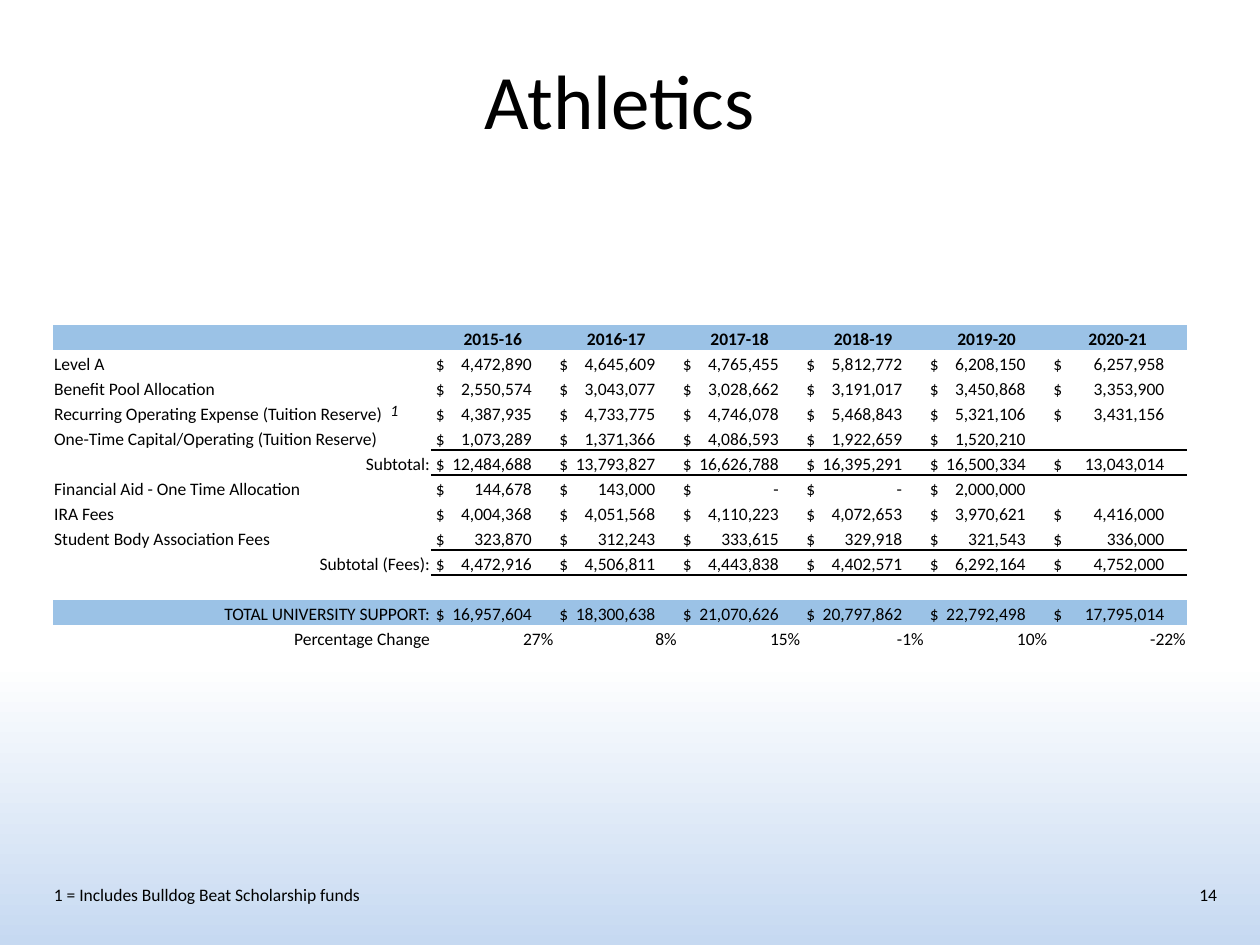
from dataclasses import dataclass

from lxml.etree import SubElement
from pptx import Presentation
from pptx.dml.color import RGBColor
from pptx.enum.text import MSO_ANCHOR, PP_ALIGN
from pptx.oxml.ns import qn
from pptx.util import Inches, Pt


@dataclass(frozen=True)
class Theme:
    font: str = "Calibri"
    ink: str = "000000"
    band: str = "9BC2E6"
    paper: str = "FFFFFF"
    sky: str = "C6D9F1"
    title_size: float = 44
    body_size: float = 10
    mark_size: float = 9
    rule_width: float = 1


THEME = Theme()
NO_STYLE_NO_GRID = "{2D5ABB26-0587-4C30-8999-92F81FD0307C}"

TITLE = "Athletics"
FOOTNOTE = "1 = Includes Bulldog Beat Scholarship funds"
FOOTNOTE_MARK = "1"
PAGE_NUMBER = "14"

YEARS = ["2015-16", "2016-17", "2017-18", "2018-19", "2019-20", "2020-21"]
# Row kind, label, one value per year (None leaves the cell empty)
ROWS = [
    ("header", "", YEARS),
    ("item", "Level A", [4472890, 4645609, 4765455, 5812772, 6208150, 6257958]),
    ("item", "Benefit Pool Allocation",
     [2550574, 3043077, 3028662, 3191017, 3450868, 3353900]),
    ("item", "Recurring Operating Expense (Tuition Reserve)",
     [4387935, 4733775, 4746078, 5468843, 5321106, 3431156]),
    ("item", "One-Time Capital/Operating (Tuition Reserve)",
     [1073289, 1371366, 4086593, 1922659, 1520210, None]),
    ("subtotal", "Subtotal:",
     [12484688, 13793827, 16626788, 16395291, 16500334, 13043014]),
    ("item", "Financial Aid - One Time Allocation",
     [144678, 143000, 0, 0, 2000000, None]),
    ("item", "IRA Fees", [4004368, 4051568, 4110223, 4072653, 3970621, 4416000]),
    ("item", "Student Body Association Fees",
     [323870, 312243, 333615, 329918, 321543, 336000]),
    ("subtotal", "Subtotal (Fees):",
     [4472916, 4506811, 4443838, 4402571, 6292164, 4752000]),
    ("blank", "", [None] * len(YEARS)),
    ("total", "TOTAL UNIVERSITY SUPPORT:",
     [16957604, 18300638, 21070626, 20797862, 22792498, 17795014]),
    ("change", "Percentage Change", ["27%", "8%", "15%", "-1%", "10%", "-22%"]),
]
WHITE_LABELS = ("IRA Fees", "Student Body Association Fees")

TABLE_BOX = (0.42, 2.58, 9, 2.58)
COLUMN_WIDTHS = [3] + [0.98] * 5 + [1.08 + 0.02]
AMOUNT_INSET = 0.04
AMOUNT_END_GAP = 0.18


def write(frame, text, size=THEME.body_size, align=PP_ALIGN.LEFT,
          bold=False, italic=False, tab=None):
    """Fill the frame's first paragraph; tab is a right tab stop in inches."""
    paragraph = frame.paragraphs[0]
    paragraph.alignment = align
    if tab:
        stops = SubElement(paragraph._p.get_or_add_pPr(), qn("a:tabLst"))
        SubElement(stops, qn("a:tab"), pos=str(Inches(tab)), algn="r")
    if not text:
        SubElement(paragraph._p, qn("a:endParaRPr"), sz=str(int(size * 100)))
        return
    run = paragraph.add_run()
    run.text = text
    font = run.font
    font.name, font.size = THEME.font, Pt(size)
    font.bold, font.italic = bold, italic
    font.color.rgb = RGBColor.from_string(THEME.ink)


def add_text(slide, text, box, top_inset=0.05, **text_format):
    frame = slide.shapes.add_textbox(*map(Inches, box)).text_frame
    frame.word_wrap = True
    frame.margin_top = Inches(top_inset)
    write(frame, text, **text_format)


def add_rule(cell, side):
    """Draw a cell border; side is 'T' or 'B'. Must come before the fill."""
    line = SubElement(cell._tc.get_or_add_tcPr(), qn(f"a:ln{side}"),
                      w=str(Pt(THEME.rule_width)))
    fill = SubElement(line, qn("a:solidFill"))
    SubElement(fill, qn("a:srgbClr"), val=THEME.ink)


def paint(cell, color):
    if color:
        cell.fill.solid()
        cell.fill.fore_color.rgb = RGBColor.from_string(color)
    else:
        cell.fill.background()


def set_insets(cell, left=0.01):
    cell.vertical_anchor = MSO_ANCHOR.BOTTOM
    cell.margin_left = Inches(left)
    cell.margin_right = cell.margin_top = Inches(0.01)
    cell.margin_bottom = 0


def write_value(cell, kind, value, width):
    if isinstance(value, int):
        set_insets(cell, left=AMOUNT_INSET)
        amount = f"{value:,}" if value else "-"
        write(cell.text_frame, f"$\t{amount}",
              tab=width - AMOUNT_END_GAP - AMOUNT_INSET)
    else:
        set_insets(cell)
        header = kind == "header"
        write(cell.text_frame, value, bold=header,
              align=PP_ALIGN.CENTER if header else PP_ALIGN.RIGHT)


def add_support_table(slide):
    frame = slide.shapes.add_table(len(ROWS), len(COLUMN_WIDTHS),
                                   *map(Inches, TABLE_BOX))
    table = frame.table
    table.first_row = table.horz_banding = False
    table._tbl.tblPr.find(qn("a:tableStyleId")).text = NO_STYLE_NO_GRID
    for column, width in zip(table.columns, COLUMN_WIDTHS):
        column.width = Inches(width)
    for row in table.rows:
        row.height = Inches(TABLE_BOX[3] / len(ROWS))

    next_kinds = [kind for kind, _, _ in ROWS[1:]] + [None]
    for r, ((kind, label, values), next_kind) in enumerate(zip(ROWS, next_kinds)):
        band = THEME.band if kind in ("header", "total") else None
        label_cell = table.cell(r, 0)
        set_insets(label_cell)
        write(label_cell.text_frame, label,
              align=PP_ALIGN.LEFT if kind == "item" else PP_ALIGN.RIGHT)
        paint(label_cell, band)
        for c, value in enumerate(values, start=1):
            cell = table.cell(r, c)
            write_value(cell, kind, value, COLUMN_WIDTHS[c])
            if kind == "subtotal":
                add_rule(cell, "T")
            if next_kind == "subtotal":
                add_rule(cell, "B")
            last_white = label in WHITE_LABELS and c == len(values)
            paint(cell, THEME.paper if last_white else band)


def paint_background(slide):
    fill = slide.background.fill
    fill.gradient()
    fill.gradient_angle = 270
    stops = [(0.7, THEME.paper), (1, THEME.sky)]
    for stop, (position, color) in zip(fill.gradient_stops, stops):
        stop.position = position
        stop.color.rgb = RGBColor.from_string(color)


def main():
    deck = Presentation()
    deck.slide_width, deck.slide_height = Inches(10), Inches(7.5)
    slide = deck.slides.add_slide(deck.slide_layouts[6])
    paint_background(slide)
    add_text(slide, TITLE, (0.42, 0.33, 9, 1.25), top_inset=0.09,
             size=THEME.title_size, align=PP_ALIGN.CENTER)
    add_text(slide, PAGE_NUMBER, (9.42, 6.97, 0.42, 0.4))
    add_support_table(slide)
    add_text(slide, FOOTNOTE_MARK, (3, 3.13, 0.33, 0.25),
             size=THEME.mark_size, italic=True)
    add_text(slide, FOOTNOTE, (0.33, 6.97, 2.83, 0.27))
    deck.save("out.pptx")


if __name__ == "__main__":
    main()
